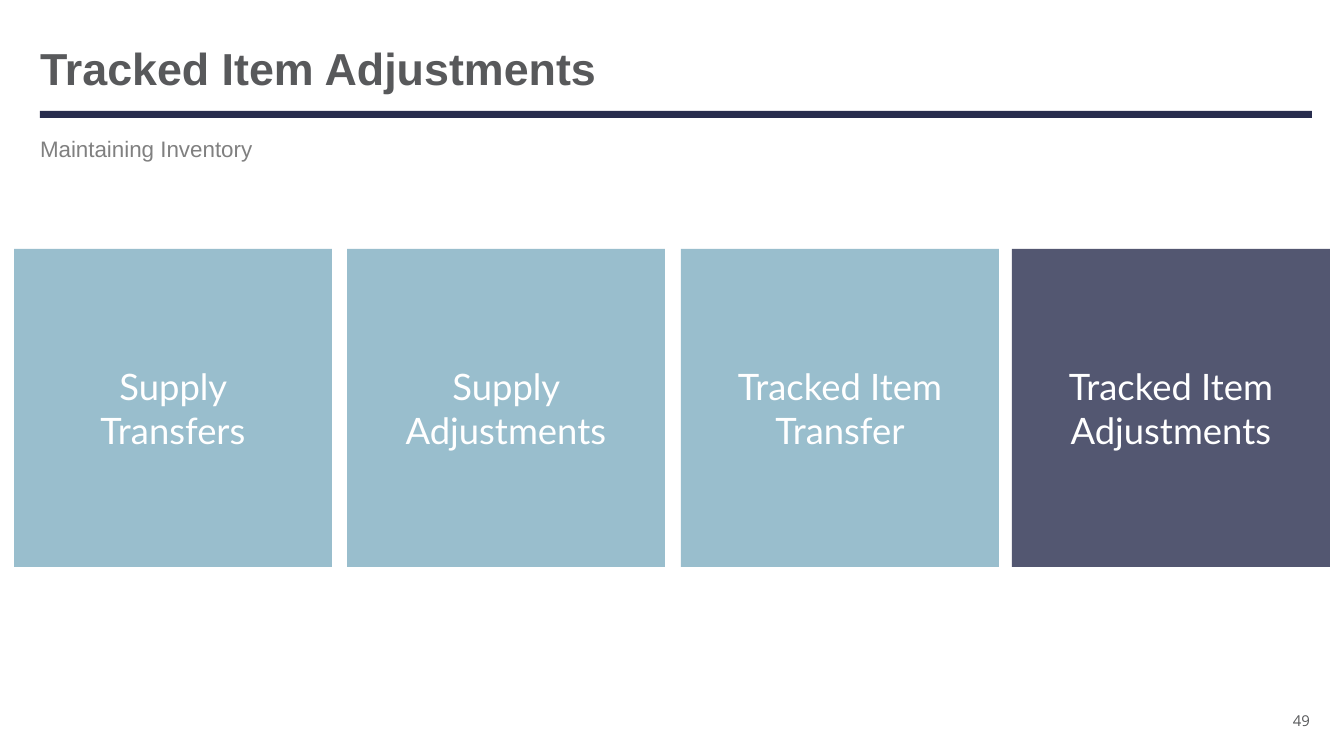
from pptx import Presentation
from pptx.dml.color import RGBColor
from pptx.enum.shapes import MSO_SHAPE
from pptx.enum.text import MSO_ANCHOR, PP_ALIGN
from pptx.oxml.ns import qn
from pptx.util import Emu, Pt
from lxml.etree import SubElement

PX = 12192000 / 1344  # EMU per px
NAVY = RGBColor(0x28, 0x2D, 0x4E)
TEAL = RGBColor(0x00, 0x5D, 0x83)
DARK_GRAY = RGBColor(0x58, 0x59, 0x5B)
GRAY = RGBColor(0x80, 0x80, 0x80)
WHITE = RGBColor(0xFF, 0xFF, 0xFF)

prs = Presentation()
prs.slide_width, prs.slide_height = Emu(12192000), Emu(6858000)
s = prs.slides.add_slide(prs.slide_layouts[6])


def add_rect(x, y, w, h, color, opacity=100):
    sp = s.shapes.add_shape(MSO_SHAPE.RECTANGLE, *(Emu(round(v * PX)) for v in (x, y, w, h)))
    sp.shadow.inherit = False
    sp.fill.solid()
    sp.fill.fore_color.rgb = color
    sp.line.fill.background()
    if opacity < 100:
        clr = sp._element.spPr.find(qn("a:solidFill")).find(qn("a:srgbClr"))
        SubElement(clr, qn("a:alpha")).set("val", str(opacity * 1000))
    return sp


def set_text(sp, text, font, size, color, inset_x, inset_y, anchor, align):
    tf = sp.text_frame
    tf.word_wrap = True
    tf.vertical_anchor = anchor
    tf.margin_left = tf.margin_right = Emu(round(inset_x * PX))
    tf.margin_top = tf.margin_bottom = Emu(round(inset_y * PX))
    p = tf.paragraphs[0]
    p.alignment = align
    r = p.add_run()
    r.text = text
    r.font.name, r.font.size = font, Pt(size)
    r.font.color.rgb = color
    return p


# Rule under the title
add_rect(40, 111, 1272, 7, NAVY)

# Title, subtitle and page number
labels = [
    ((40, 41, 1271, 62), "Tracked Item Adjustments", "Arial", 32, DARK_GRAY, 5, MSO_ANCHOR.MIDDLE, PP_ALIGN.LEFT),
    ((40, 130, 1271, 72), "Maintaining Inventory", "Arial", 16, GRAY, 5, MSO_ANCHOR.TOP, PP_ALIGN.LEFT),
    ((1260, 698, 50, 46), "49", "Open Sans", 10.7, DARK_GRAY, 0, MSO_ANCHOR.MIDDLE, PP_ALIGN.RIGHT),
]
paragraphs = []
for box, text, font, size, color, inset_y, anchor, align in labels:
    sp = s.shapes.add_textbox(*(Emu(round(v * PX)) for v in box))
    paragraphs.append(set_text(sp, text, font, size, color, 0, inset_y, anchor, align))
title, subtitle, page_number = paragraphs
title.line_spacing = 0.85
title.runs[0].font.bold = True
subtitle.space_before = Pt(2.7)

# Topic tiles, the current topic in navy
tiles = [
    (14, "Supply Transfers", TEAL, 40),
    (347, "Supply Adjustments", TEAL, 40),
    (681, "Tracked Item Transfer", TEAL, 40),
    (1012, "Tracked Item Adjustments", NAVY, 80),
]
for x, text, color, opacity in tiles:
    sp = add_rect(x, 249, 318, 318, color, opacity)
    set_text(sp, text, "Lato", 26, WHITE, 32, 32, MSO_ANCHOR.MIDDLE, PP_ALIGN.CENTER)

prs.save("out.pptx")
